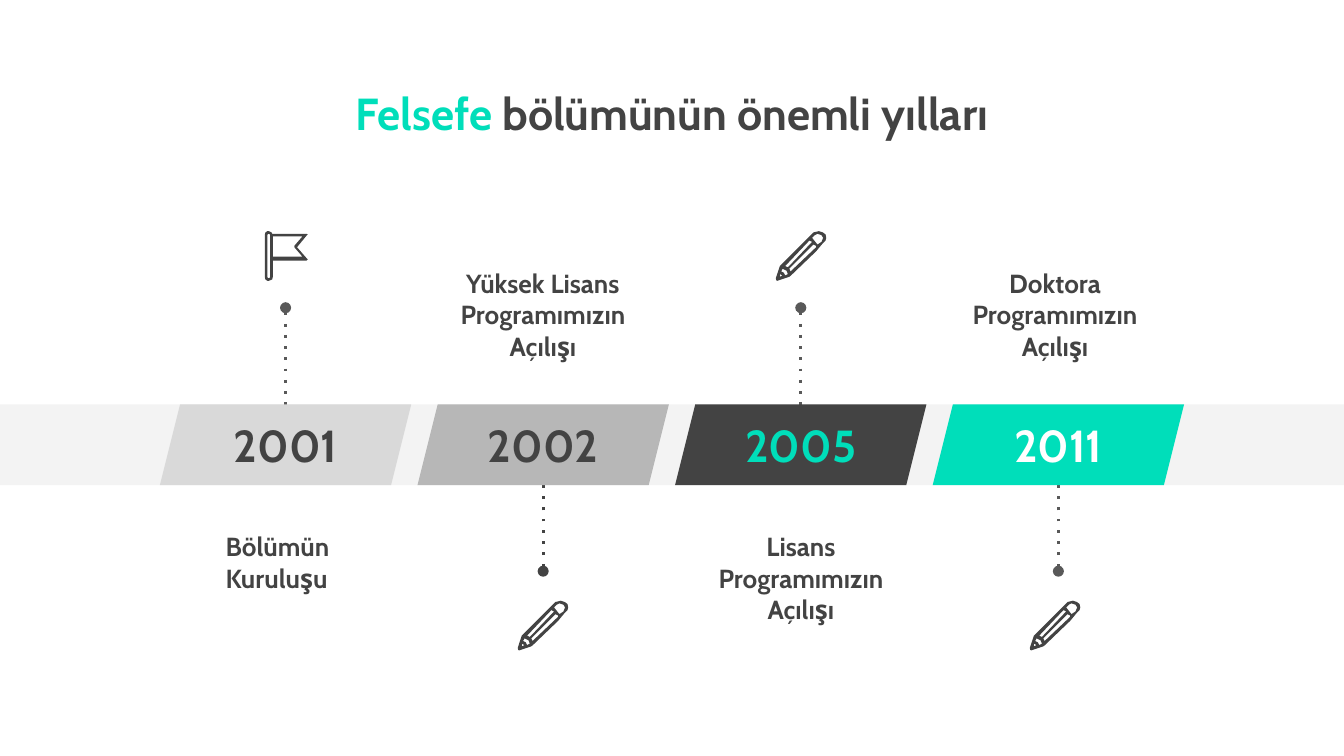
from dataclasses import dataclass

import pptx
from lxml import etree
from pptx.dml.color import RGBColor
from pptx.enum.shapes import MSO_CONNECTOR, MSO_SHAPE
from pptx.enum.text import MSO_ANCHOR, MSO_AUTO_SIZE, PP_ALIGN
from pptx.oxml.ns import qn
from pptx.util import Inches, Pt


@dataclass(frozen=True)
class Theme:
    font: str = "Cabin"
    big: int = 24
    small: int = 14
    dark: str = "434343"
    mint: str = "00DEBA"
    white: str = "FFFFFF"
    strip: str = "F3F3F3"
    light: str = "D9D9D9"
    mid: str = "B7B7B7"
    stem: str = "595959"


@dataclass(frozen=True)
class Event:
    year: str
    label: str
    fill: str
    ink: str
    icon: list
    up: bool  # stem and icon above the band
    center: float  # shared by label and icon
    width: float
    stem: str
    align: PP_ALIGN = PP_ALIGN.CENTER


THEME = Theme()
BAND_TOP, BAND_H = 3.01, 0.6
FIRST, LAST, TILE_W = 1.19, 6.94, 1.87

# Icon outlines in hundredths of an inch: the outer edge, then its holes.
PENCIL = [
    [(32, 0), (28, 1), (22, 7), (3, 26), (0, 35), (0.3, 36.5), (1, 37),
     (10, 34), (11, 33.3), (30, 15), (35, 9), (37, 7), (37.5, 5),
     (37, 2.5), (35, 1)],
    [(31, 2), (34, 3), (35.2, 5), (34, 8), (31, 10), (27, 5), (29, 3)],
    [(25, 7), (27, 8), (9, 27), (7, 26)],
    [(28, 10), (30, 11), (30, 12), (11, 30), (10, 28)],
    [(5, 28), (8, 29.5), (9, 32), (7, 33), (6, 31), (4, 30)],
    [(3, 32), (5, 33), (3, 34)],
]
FLAG = [
    [(2, 0), (0.5, 1), (0, 3), (0, 34), (0.5, 36), (2, 37), (3, 37),
     (5.5, 36), (6, 34), (6, 22), (31, 22), (32, 21), (31, 20), (24, 12),
     (31, 3.5), (32, 2.5), (31, 2), (5.5, 2), (5, 1), (3, 0)],
    [(28, 4), (22, 11), (22, 12), (28, 19), (6, 19), (6, 4)],
    [(2.3, 2), (2, 3), (2, 34), (2.3, 35), (3.5, 35), (4, 34), (4, 3),
     (3.5, 2)],
]

EVENTS = [
    Event("2001", "Bölümün Kuruluşu", THEME.light, THEME.dark,
          FLAG, True, 2.13, 1.1, THEME.stem, PP_ALIGN.LEFT),
    Event("2002", "Yüksek Lisans Programımızın Açılışı", THEME.mid,
          THEME.dark, PENCIL, False, 4.04, 1.55, THEME.dark),
    Event("2005", "Lisans Programımızın Açılışı", THEME.dark, THEME.mint,
          PENCIL, True, 5.96, 1.7, THEME.stem),
    Event("2011", "Doktora Programımızın Açılışı", THEME.mint, THEME.white,
          PENCIL, False, 7.85, 1.58, THEME.stem),
]


def paint(shape, color):
    shape.shadow.inherit = False
    shape.fill.solid()
    shape.fill.fore_color.rgb = RGBColor.from_string(color)
    shape.line.fill.background()


def add_block(slide, kind, left, width, color):
    shape = slide.shapes.add_shape(
        kind, Inches(left), Inches(BAND_TOP), Inches(width), Inches(BAND_H))
    paint(shape, color)
    return shape


def set_font(font, size, color):
    font.name = THEME.font
    font.size = Pt(size)
    font.bold = True
    font.color.rgb = RGBColor.from_string(color)


def set_frame(frame):
    frame.word_wrap = True
    frame.auto_size = MSO_AUTO_SIZE.NONE
    frame.vertical_anchor = MSO_ANCHOR.TOP
    frame.margin_left = frame.margin_right = Inches(0.1)
    frame.margin_top = frame.margin_bottom = Inches(0.1)


def add_text(slide, text, center, top, width, size, color,
             align=PP_ALIGN.CENTER):
    box = slide.shapes.add_textbox(
        Inches(center - width / 2), Inches(top), Inches(width), Inches(0.37))
    set_frame(box.text_frame)
    para = box.text_frame.paragraphs[0]
    para.text = text
    para.alignment = align
    set_font(para.font, size, color)


def add_title(slide):
    title = slide.shapes.title
    title.left, title.top = Inches(0.58), Inches(0.54)
    title.width, title.height = Inches(8.84), Inches(0.53)
    set_frame(title.text_frame)
    para = title.text_frame.paragraphs[0]
    para.alignment = PP_ALIGN.CENTER
    for text, color in (("Felsefe ", THEME.mint),
                        ("bölümünün önemli yılları", THEME.dark)):
        run = para.add_run()
        run.text = text
        set_font(run.font, THEME.big, color)


def add_stem(slide, x, start, end, color):
    """Dotted line with a round head at its start."""
    stem = slide.shapes.add_connector(
        MSO_CONNECTOR.STRAIGHT, Inches(x), Inches(start), Inches(x), Inches(end))
    stem.line.width = Pt(1.5)
    stem.line.color.rgb = RGBColor.from_string(color)
    props = stem._element.spPr
    line = props.find(qn("a:ln"))
    etree.SubElement(line, qn("a:prstDash"), val="dot")
    etree.SubElement(line, qn("a:headEnd"), type="oval")
    etree.SubElement(props, qn("a:effectLst"))


def add_icon(slide, rings, center, top):
    rings = [[(Inches(x / 100), Inches(y / 100)) for x, y in ring]
             for ring in rings]
    pen = slide.shapes.build_freeform(*rings[0][0])
    for ring in rings:
        if ring is not rings[0]:
            pen.move_to(*ring[0])
        pen.add_line_segments(ring[1:], close=True)
    width = max(x for x, _ in rings[0])
    icon = pen.convert_to_shape(Inches(center) - width // 2, Inches(top))
    paint(icon, THEME.dark)


def add_event(slide, event, left):
    middle = left + TILE_W / 2
    if event.up:
        start, end, icon_top, label_top = 2.29, 3.5, 1.72, 3.85
    else:
        start, end, icon_top, label_top = 4.25, 3.14, 4.47, 1.89
    add_stem(slide, middle, start, end, event.stem)
    tile = add_block(slide, MSO_SHAPE.PARALLELOGRAM, left, TILE_W, event.fill)
    tile.adjustments[0] = 0.25
    add_text(slide, event.year, middle, BAND_TOP, 1.33, THEME.big, event.ink)
    add_text(slide, event.label, event.center, label_top, event.width,
             THEME.small, THEME.dark, event.align)
    add_icon(slide, event.icon, event.center, icon_top)


def main():
    deck = pptx.Presentation()
    deck.slide_width = Inches(10)
    deck.slide_height = deck.slide_width * 9 // 16
    slide = deck.slides.add_slide(deck.slide_layouts.get_by_name("Title Only"))
    add_title(slide)
    add_block(slide, MSO_SHAPE.RECTANGLE, 0, 10, THEME.strip)
    step = (LAST - FIRST) / (len(EVENTS) - 1)
    for i, event in enumerate(EVENTS):
        add_event(slide, event, FIRST + i * step)
    deck.save("out.pptx")


if __name__ == "__main__":
    main()
